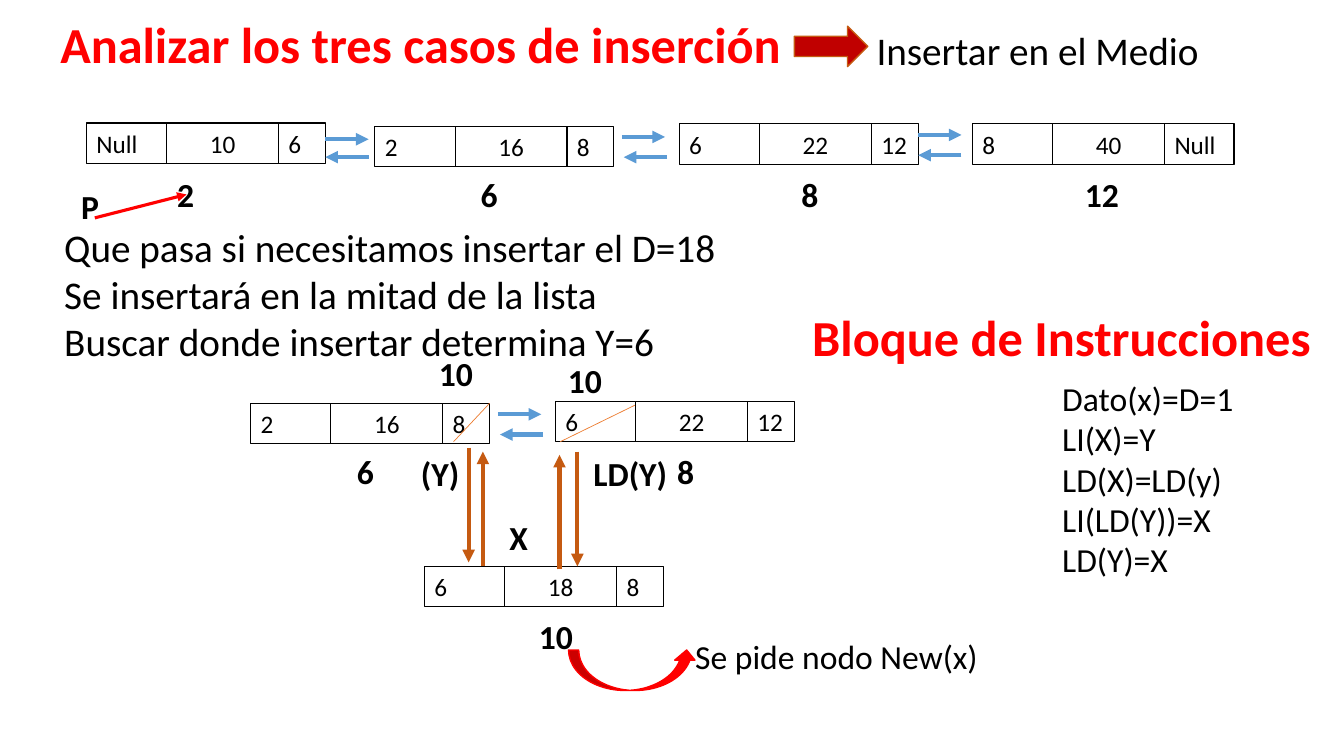
"""Slide on inserting a node in the middle of a doubly linked list."""
import lxml.etree
import pptx
import pptx.dml.color
import pptx.enum.shapes
import pptx.enum.text
import pptx.oxml.ns
import pptx.util

Cm = pptx.util.Cm
Pt = pptx.util.Pt
RGBColor = pptx.dml.color.RGBColor
Align = pptx.enum.text.PP_ALIGN
Preset = pptx.enum.shapes.MSO_SHAPE
qn = pptx.oxml.ns.qn

BLACK = RGBColor(0x00, 0x00, 0x00)
RED = RGBColor(0xFF, 0x00, 0x00)
DARK_RED = RGBColor(0xC0, 0x00, 0x00)
BLUE = RGBColor(0x5B, 0x9B, 0xD5)
BROWN = RGBColor(0xC5, 0x5A, 0x11)
ORANGE = RGBColor(0xED, 0x7D, 0x31)

presentation = pptx.Presentation()
presentation.slide_width = Cm(33.87)
presentation.slide_height = Cm(19.05)
slide = presentation.slides.add_slide(presentation.slide_layouts[6])


def write(shape, text, size, color=BLACK, bold=False, alignment=Align.LEFT):
    frame = shape.text_frame
    frame.word_wrap = True
    frame.auto_size = pptx.enum.text.MSO_AUTO_SIZE.SHAPE_TO_FIT_TEXT
    frame.text = text
    for paragraph in frame.paragraphs:
        paragraph.alignment = alignment
        for run in paragraph.runs:
            run.font.name = "Calibri"
            run.font.size = Pt(size)
            run.font.bold = bold
            run.font.color.rgb = color


def draw_line(start_x, start_y, end_x, end_y, color, width, arrow=True):
    connector = slide.shapes.add_connector(
        pptx.enum.shapes.MSO_CONNECTOR.STRAIGHT,
        Cm(start_x), Cm(start_y), Cm(end_x), Cm(end_y))
    connector.line.color.rgb = color
    connector.line.width = Pt(width)
    if arrow:
        line = connector.line._get_or_add_ln()
        lxml.etree.SubElement(line, qn("a:tailEnd"), type="triangle")
    lxml.etree.SubElement(connector._element.spPr, qn("a:effectLst"))


paragraph_boxes = [
    ("Analizar los tres casos de inserción", 1.27, 0.2, 18.95, 1.8, 36, RED, True),
    ("Que pasa si necesitamos insertar el D=18\n"
     "Se insertará en la mitad de la lista\n"
     "Buscar donde insertar determina Y=6", 1.37, 5.49, 31.09, 3.84, 28, BLACK, False),
    ("Bloque de Instrucciones", 20.22, 7.59, 13.51, 1.8, 36, RED, True),
    ("Dato(x)=D=1\nLI(X)=Y\nLD(X)=LD(y)\nLI(LD(Y))=X\nLD(Y)=X",
     26.52, 9.4, 5.08, 5.38, 24, BLACK, False),
    ("Se pide nodo New(x)", 17.27, 15.9, 9.35, 1.27, 24, BLACK, False),
]
for text, left, top, width, height, size, color, bold in paragraph_boxes:
    box = slide.shapes.add_textbox(Cm(left), Cm(top), Cm(width), Cm(height))
    write(box, text, size, color, bold)

case_box = slide.shapes.add_textbox(Cm(21.84), Cm(0.53), Cm(11.18), Cm(1.45))
case_box.text_frame.text = "Insertar en el Medio"
properties = case_box.text_frame.paragraphs[0]._p.get_or_add_pPr()
properties.set("marL", str(Cm(1.27)))
properties.set("indent", str(-Cm(1.27)))
lxml.etree.SubElement(properties, qn("a:buFont"), typeface="Arial")
lxml.etree.SubElement(properties, qn("a:buChar"), char="•")
write(case_box, "Insertar en el Medio", 28)

nodes = [
    (2.18, 3.1, ("Null", "10", "6"), 1.18),
    (9.45, 3.18, ("2", "16", "8"), 1.18),
    (17.12, 3.12, ("6", "22", "12"), 1.18),
    (24.51, 3.12, ("8", "40", "Null"), 1.75),
    (6.32, 10.16, ("2", "16", "8"), 1.18),
    (14, 10.11, ("6", "22", "12"), 1.18),
    (10.7, 14.27, ("6", "18", "8"), 1.18),
]
for left, top, values, last_width in nodes:
    alignments = (Align.LEFT, Align.CENTER, Align.LEFT)
    for value, width, alignment in zip(values, (2.02, 2.82, last_width), alignments):
        cell = slide.shapes.add_shape(Preset.RECTANGLE, Cm(left), Cm(top), Cm(width), Cm(1.02))
        cell.shadow.inherit = False
        cell.fill.background()
        cell.line.color.rgb = BLACK
        cell.line.width = Pt(0.75)
        write(cell, value, 18, alignment=alignment)
        left += width

labels = [
    ("2", 3.78, 4.27, 1.8), ("6", 11.43, 4.27, 1.8),
    ("8", 19.51, 4.27, 1.8), ("12", 26.87, 4.27, 1.8),
    ("P", 1.37, 4.55, 1.8), ("6", 8.31, 11.25, 1.8),
    ("8", 16.38, 11.25, 1.8), ("(Y)", 10.19, 11.28, 1.8),
    ("LD(Y)", 14.63, 11.28, 2.51), ("X", 12.17, 12.9, 1.8),
    ("10", 10.59, 8.76, 1.8), ("10", 13.84, 8.94, 1.8),
    ("10", 13.11, 15.39, 1.8),
]
for text, left, top, width in labels:
    label = slide.shapes.add_textbox(Cm(left), Cm(top), Cm(width), Cm(1.27))
    write(label, text, 24, bold=True, alignment=Align.CENTER)

link_length = 1.09
links = [
    (8.2, 3.51, 8.2, 3.96), (15.67, 3.45, 15.72, 3.96),
    (23.14, 3.4, 23.14, 3.91), (12.55, 10.44, 12.6, 10.95),
]
for next_x, next_y, previous_x, previous_y in links:
    draw_line(next_x, next_y, next_x + link_length, next_y, BLUE, 3)
    draw_line(previous_x + link_length, previous_y, previous_x, previous_y, BLUE, 3)

new_links = [(11.81, 11.28, 14.17), (12.17, 14.27, 11.38),
             (14.1, 14.35, 11.46), (14.55, 11.38, 14.27)]
for x, start_y, end_y in new_links:
    draw_line(x, start_y, x, end_y, BROWN, 3)

draw_line(2.39, 5.49, 4.7, 4.9, RED, 2.25)
draw_line(16, 10.21, 14.12, 11.13, ORANGE, 0.5, arrow=False)
draw_line(12.34, 10.16, 11.43, 11.13, ORANGE, 0.5, arrow=False)

block_arrows = [
    (Preset.RIGHT_ARROW, 20.02, 0.66, 1.85, DARK_RED, BROWN),
    (Preset.CURVED_UP_ARROW, 14.33, 16.38, 3.23, RED, RED),
]
for preset, left, top, width, fill, outline in block_arrows:
    block_arrow = slide.shapes.add_shape(preset, Cm(left), Cm(top), Cm(width), Cm(1.02))
    block_arrow.shadow.inherit = False
    block_arrow.fill.solid()
    block_arrow.fill.fore_color.rgb = fill
    block_arrow.line.color.rgb = outline
    block_arrow.line.width = Pt(1)

presentation.save("out.pptx")
